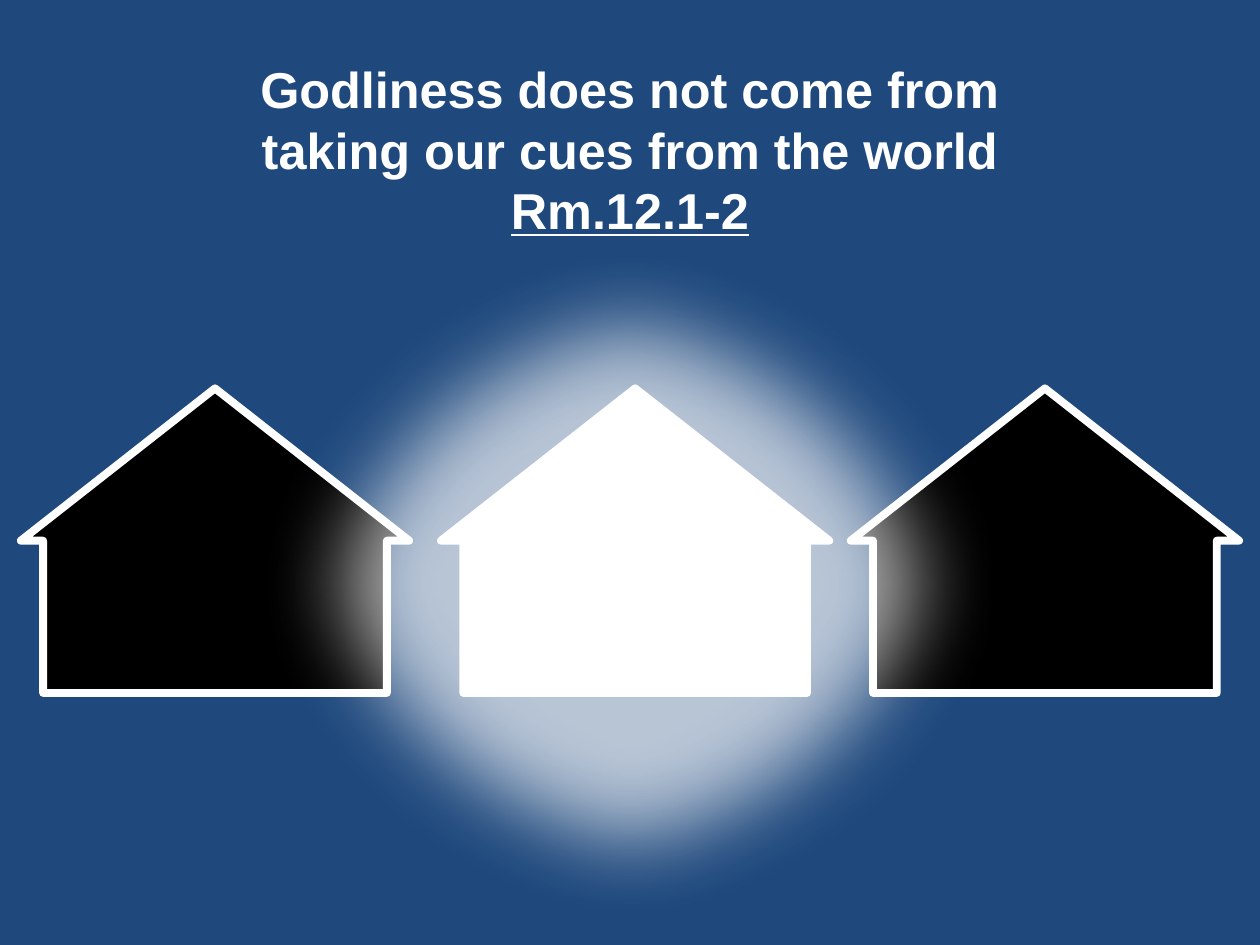
from lxml import etree
from pptx import Presentation
from pptx.dml.color import RGBColor
from pptx.enum.shapes import MSO_SHAPE as SHAPE
from pptx.enum.text import MSO_ANCHOR as ANCHOR, PP_ALIGN as ALIGN
from pptx.oxml.ns import qn
from pptx.util import Cm, Pt

NAVY = RGBColor(0x1F, 0x49, 0x7D)
WHITE = RGBColor(0xFF, 0xFF, 0xFF)
BLACK = RGBColor(0x00, 0x00, 0x00)

TITLE_LINES = [
    ("Godliness does not come from", False),
    ("taking our cues from the world", False),
    ("Rm.12.1-2", True),
]
HOUSES_TOP, HOUSE_W, HOUSE_H = 7.83, 7.83, 6.14


def add_filled(s, kind, box, fill, line=None, width=0):
    sp = s.shapes.add_shape(kind, *(Cm(v) for v in box))
    sp.shadow.inherit = False
    sp.fill.solid()
    sp.fill.fore_color.rgb = fill
    if line is None:
        sp.line.fill.background()
    else:
        sp.line.color.rgb = line
        sp.line.width = Pt(width)
    return sp


def add_title_panel(s, box):
    tf = add_filled(s, SHAPE.RECTANGLE, box, NAVY).text_frame
    layout = {"word_wrap": True, "vertical_anchor": ANCHOR.TOP, "margin_top": Cm(1.17)}
    for name, value in layout.items():
        setattr(tf, name, value)
    p = tf.paragraphs[0]
    p.alignment = ALIGN.CENTER
    p.line_spacing = Pt(34.6)
    for i, (text, underline) in enumerate(TITLE_LINES):
        if i:
            p.add_line_break()
        r = p.add_run()
        r.text = text
        style = {"name": "Arial", "size": Pt(28.8), "bold": True, "underline": underline}
        for name, value in style.items():
            setattr(r.font, name, value)
        r.font.color.rgb = WHITE


def add_house(s, left, fill):
    box = (left, HOUSES_TOP, HOUSE_W, HOUSE_H)
    sp = add_filled(s, SHAPE.UP_ARROW, box, fill, WHITE, 4.5)
    sp.adjustments[0] = 0.885
    sp.adjustments[1] = 0.5
    etree.SubElement(sp.line._get_or_add_ln(), qn("a:round"))


def add_glow(s, box):
    sp = add_filled(s, SHAPE.OVAL, box, WHITE, BLACK, 0.75)
    spPr = sp._element.spPr
    color = spPr.find(qn("a:solidFill")).find(qn("a:srgbClr"))
    etree.SubElement(color, qn("a:alpha"), val="68000")
    etree.SubElement(spPr.find(qn("a:effectLst")), qn("a:softEdge"), rad=str(Pt(50)))


def main():
    prs = Presentation()
    prs.slide_width, prs.slide_height = Cm(25.4), Cm(19.05)
    s = prs.slides.add_slide(prs.slide_layouts[6])
    add_title_panel(s, (0, 0, 25.4, 19.05))
    for left in (0.42, 17.15):
        add_house(s, left, BLACK)
    add_glow(s, (4.87, 4.66, 15.66, 14.18))
    add_house(s, 8.89, WHITE)
    prs.save("out.pptx")


if __name__ == "__main__":
    main()
